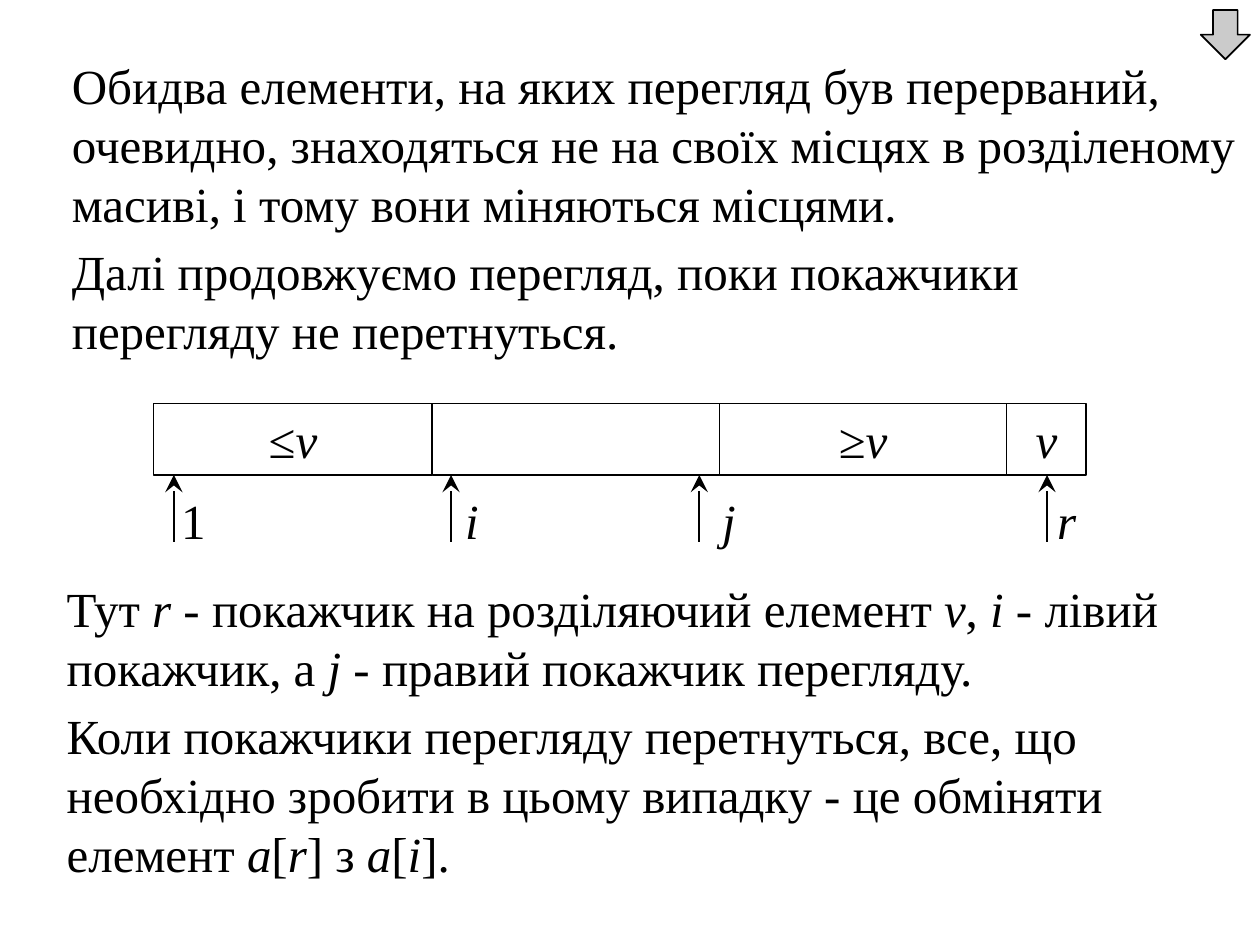
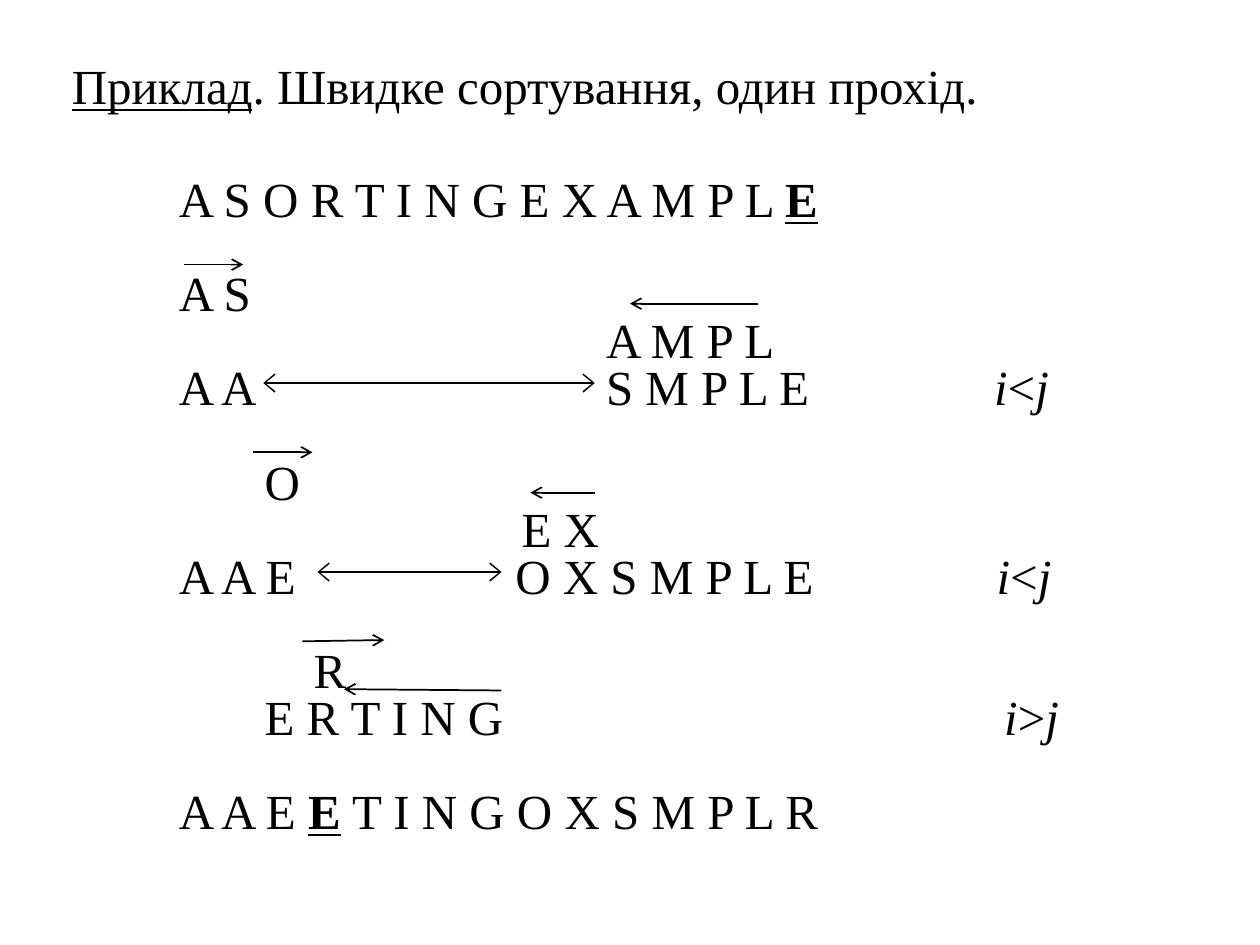
from lxml import etree
from pptx import Presentation
from pptx import util as u
from pptx.dml.color import RGBColor
from pptx.enum import shapes, text
from pptx.oxml.ns import qn

COLOURS = {"ink": "000000", "button": "CBCBCB"}
INK = RGBColor.from_string(COLOURS["ink"])
BASE_FONT = {"name": "Times New Roman", "size": u.Pt(28), "bold": False, "italic": False, "underline": False}
STYLES = {"": {}, "i": {"italic": True}, "u": {"underline": True}, "key": {"bold": True, "underline": True}}
FRAME = {"word_wrap": True, "auto_size": text.MSO_AUTO_SIZE.NONE, "vertical_anchor": text.MSO_ANCHOR.TOP}
WIDE_FRAME = {**FRAME, "margin_left": u.Inches(0.2), "margin_right": u.Inches(0.2),
              "margin_top": u.Inches(0.05), "margin_bottom": u.Inches(0.05)}
PROSE = {"alignment": text.PP_ALIGN.LEFT, "space_before": u.Pt(5.6)}
CENTRED = {"alignment": text.PP_ALIGN.CENTER}
TRACE = {"alignment": text.PP_ALIGN.LEFT, "line_spacing": 0.8}
PROSE_INDENT = 0.37


def write(shape, paragraphs, frame_format, paragraph_format, indent=0):
    """Fill a shape; each paragraph is a list of (text, style name) runs."""
    frame = shape.text_frame
    for name, value in frame_format.items():
        setattr(frame, name, value)
    for number, runs in enumerate(paragraphs):
        paragraph = frame.add_paragraph() if number else frame.paragraphs[0]
        for name, value in paragraph_format.items():
            setattr(paragraph, name, value)
        properties = paragraph._p.get_or_add_pPr()
        properties.set("marL", str(u.Inches(indent)))
        properties.set("indent", "0")
        etree.SubElement(properties, qn("a:buNone"))
        for words, style in runs:
            run = paragraph.add_run()
            run.text = words
            for name, value in {**BASE_FONT, **STYLES[style]}.items():
                setattr(run.font, name, value)
            run.font.color.rgb = INK


def add_arrow(slide, start, end, ends, head):
    """Draw a line with the same arrowhead (type, w, len) at each of the ends."""
    points = [u.Inches(value) for value in (*start, *end)]
    arrow = slide.shapes.add_connector(shapes.MSO_CONNECTOR.STRAIGHT, *points)
    arrow.line.color.rgb = INK
    arrow.line.width = u.Pt(1)
    for tag in ends:
        etree.SubElement(arrow.line._get_or_add_ln(), qn(f"a:{tag}"), head)
    etree.SubElement(arrow._element.spPr, qn("a:effectLst"))


presentation = Presentation()
presentation.slide_width = u.Inches(10)
presentation.slide_height = u.Inches(7.5)

# Slide 1: opening text
slide = presentation.slides.add_slide(presentation.slide_layouts[1])
title = slide.shapes.title._element
title.getparent().remove(title)
body = slide.placeholders[1]
body.left, body.top, body.width, body.height = [u.Inches(v) for v in (0, 0.39, 10, 2.73)]
write(body, [
    [("Обидва елементи, на яких перегляд був перерваний, очевидно, знаходяться не на своїх "
      "місцях в розділеному масиві, і тому вони міняються місцями.", "")],
    [("Далі продовжуємо перегляд, поки покажчики перегляду не перетнуться.", "")],
], WIDE_FRAME, PROSE, PROSE_INDENT)

# Partitioned array
array_top, cell_height = 3.2, 0.57
cells = [
    (2.21, [("≤", ""), ("v", "i")]),
    (2.28, []),
    (2.28, [("≥", ""), ("v", "i")]),
    (0.63, [("v", "i")]),
]
left = 1.22
for width, runs in cells:
    cell = slide.shapes.add_shape(shapes.MSO_SHAPE.RECTANGLE, u.Inches(left), u.Inches(array_top),
                                  u.Inches(width), u.Inches(cell_height))
    cell.shadow.inherit = False
    cell.fill.background()
    cell.line.color.rgb = INK
    cell.line.width = u.Pt(0.75)
    write(cell, [runs], FRAME, CENTRED)
    left += width

# Pointers below the array
array_bottom = array_top + cell_height
pointer_head = {"type": "stealth", "w": "lg", "len": "lg"}
pointers = [(1.38, 1.22, "1", ""), (3.58, 3.43, "i", "i"), (5.55, 5.47, "j", "i"), (8.31, 8.15, "r", "i")]
for arrow_x, label_left, name, style in pointers:
    add_arrow(slide, (arrow_x, 4.3), (arrow_x, array_bottom), ["tailEnd"], pointer_head)
    label = slide.shapes.add_textbox(u.Inches(label_left), u.Inches(3.84), u.Inches(0.63), u.Inches(cell_height))
    write(label, [[(name, style)]], FRAME, CENTRED)

# Explanation
explanation = slide.shapes.add_textbox(u.Inches(-0.04), u.Inches(4.54), u.Inches(10), u.Inches(2.62))
write(explanation, [
    [("Тут ", ""), ("r", "i"), (" - покажчик на розділяючий елемент ", ""), ("v", "i"), (", ", ""),
     ("i", "i"), (" - лівий покажчик, а ", ""), ("j", "i"), (" - правий покажчик перегляду.", "")],
    [("Коли покажчики перегляду перетнуться, все, що необхідно зробити в цьому випадку - "
      "це обміняти елемент ", ""), ("а", "i"), ("[", ""), ("r", "i"), ("] з", ""), (" а", "i"),
     ("[", ""), ("i", "i"), ("].", "")],
], WIDE_FRAME, PROSE, PROSE_INDENT)

# Corner button
button = slide.shapes.add_shape(shapes.MSO_SHAPE.DOWN_ARROW, u.Inches(9.53), u.Inches(0.08),
                                u.Inches(0.39), u.Inches(0.39))
button.shadow.inherit = False
button.fill.solid()
button.fill.fore_color.rgb = RGBColor.from_string(COLOURS["button"])
button.line.color.rgb = INK
button.line.width = u.Pt(1)

# Slide 2: heading
slide = presentation.slides.add_slide(presentation.slide_layouts[5])
title = slide.shapes.title
title.left, title.top, title.width, title.height = [u.Inches(v) for v in (0, 0.39, 10, 0.68)]
write(title, [[("Приклад", "u"), (". Швидке сортування, один прохід.", "")]], WIDE_FRAME, PROSE, PROSE_INDENT)

# Sorting trace: columns of (row, indent, runs) on a common row grid
row_height = 26.9 / 72
less = [("i", "i"), ("<", ""), ("j", "i")]
greater = [("i", "i"), (">", ""), ("j", "i")]
left_scan = [
    (0, 0, [("A S O R T I N G E X A M P L ", ""), ("E", "key")]),
    (2, 0, [("A S", "")]),
    (4, 0, [("A A", "")]),
    (6, 0.68, [("O", "")]),
    (8, 0, [("A A E", "")]),
    (10, 1.07, [("R", "")]),
    (11, 0.68, [("E R T I N G", "")]),
    (13, 0, [("A A E ", ""), ("E", "key"), (" T I N G O X S M P L R", "")]),
]
right_scan = [
    (3, 0.72, [("A M P L", "")]),
    (4, 0.72, [("S M P L E", "")]),
    (7, 0.05, [("E X", "")]),
    (8, 0, [("O X S M P L E", "")]),
]
comparisons = [(4, 0, less), (8, 0.02, less), (11, 0.08, greater)]
for left, width, column in [(1.22, 5.8, left_scan), (3.89, 3, right_scan), (7.69, 1.3, comparisons)]:
    first_row, last_row = column[0][0], column[-1][0]
    box = slide.shapes.add_textbox(u.Inches(left), u.Inches(1.38 + first_row * row_height), u.Inches(width),
                                   u.Inches((last_row - first_row + 1) * row_height + 0.1))
    write(box, [runs for _, _, runs in column], WIDE_FRAME, TRACE)
    previous_row = first_row - 1
    for paragraph, (row, indent, _) in zip(box.text_frame.paragraphs, column):
        paragraph.space_before = u.Inches((row - previous_row - 1) * row_height)
        paragraph._p.get_or_add_pPr().set("marL", str(u.Inches(indent)))
        previous_row = row

# Scan directions
scans = [
    ((1.46, 2.1), (1.93, 2.1)),
    ((6.02, 2.41), (5, 2.41)),
    ((2.01, 3.59), (2.48, 3.59)),
    ((4.72, 3.91), (4.21, 3.91)),
    ((3.98, 5.48), (2.73, 5.47)),
    ((2.4, 5.09), (3.05, 5.08)),
]
for start, end in scans:
    add_arrow(slide, start, end, ["tailEnd"], {"type": "arrow"})

# Exchanges
for start, end in [((4.72, 3.04), (2.09, 3.04)), ((3.98, 4.54), (2.52, 4.54))]:
    add_arrow(slide, start, end, ["headEnd", "tailEnd"], {"type": "arrow", "w": "lg", "len": "med"})

presentation.save("out.pptx")
